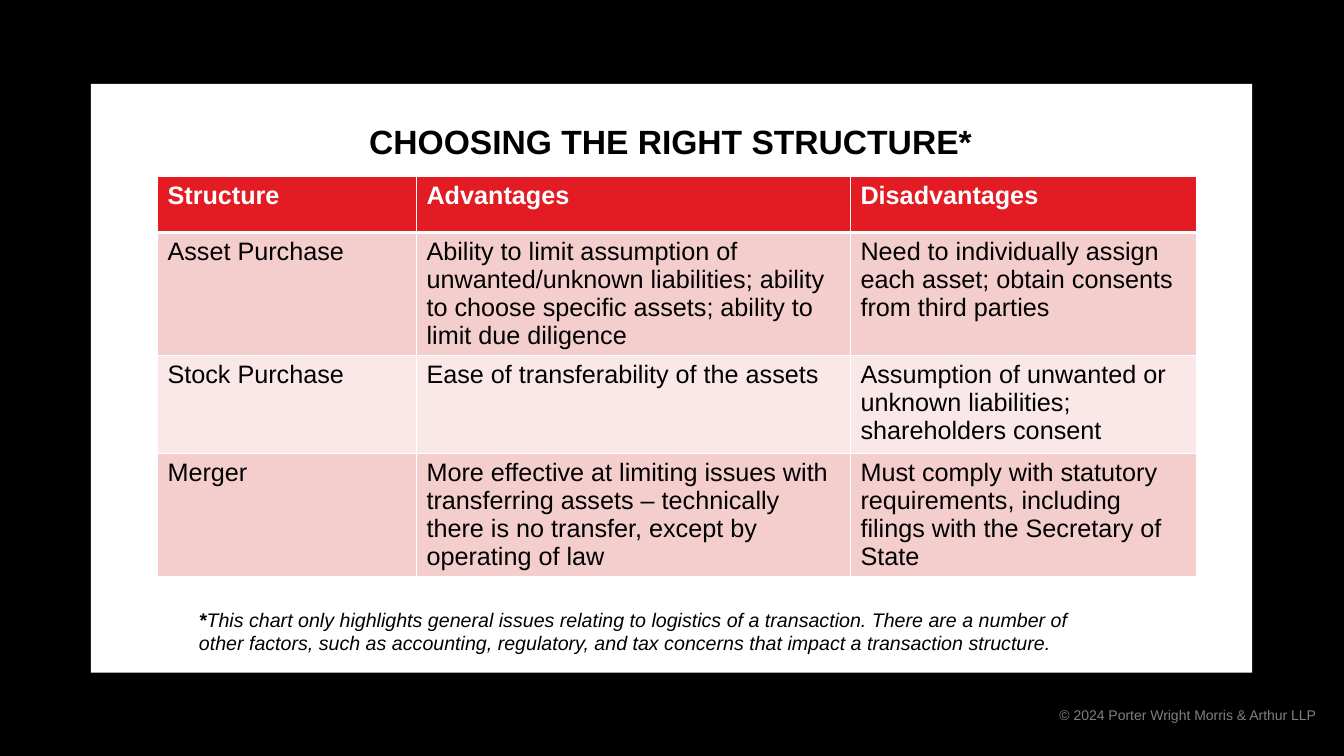
from lxml.etree import SubElement
from pptx import Presentation
from pptx.dml.color import RGBColor
from pptx.enum.shapes import MSO_SHAPE
from pptx.enum.text import MSO_ANCHOR, MSO_AUTO_SIZE, PP_ALIGN
from pptx.oxml.ns import qn
from pptx.util import Pt

# Content
TITLE = "CHOOSING THE RIGHT STRUCTURE*"
ROWS = [
    ("Structure", "Advantages", "Disadvantages"),
    ("Asset Purchase",
     "Ability to limit assumption of unwanted/unknown liabilities; ability to "
     "choose specific assets; ability to limit due diligence",
     "Need to individually assign each asset; obtain consents from third parties"),
    ("Stock Purchase",
     "Ease of transferability of the assets",
     "Assumption of unwanted or unknown liabilities; shareholders consent"),
    ("Merger",
     "More effective at limiting issues with transferring assets – technically "
     "there is no transfer, except by operating of law",
     "Must comply with statutory requirements, including filings with the "
     "Secretary of State"),
]
FOOTNOTE = ("This chart only highlights general issues relating to logistics of a "
            "transaction. There are a number of other factors, such as accounting, "
            "regulatory, and tax concerns that impact a transaction structure.")
COPYRIGHT = "© 2024 Porter Wright Morris & Arthur LLP"

# Layout and colours
COL_WIDTHS = (185, 310, 247)
ROW_HEIGHTS = (40, 87.5, 70, 87.5)
BLACK, WHITE, GRAY = "000000", "FFFFFF", "808080"
RED, BANDS = "E31B23", ("FAE8E8", "F4CDCD")


def paint(fill, color):
    fill.solid()
    fill.fore_color.rgb = RGBColor.from_string(color)


def style(r, size, color=BLACK, bold=False, italic=False):
    r.font.name, r.font.size = "Arial", Pt(size)
    r.font.bold, r.font.italic = bold, italic
    r.font.color.rgb = RGBColor.from_string(color)


def set_borders(cell, widths):
    tcPr = cell._tc.get_or_add_tcPr()
    for side, width in widths.items():
        ln = SubElement(tcPr, qn(f"a:ln{side}"), w=str(Pt(width)))
        fill = SubElement(ln, qn("a:solidFill"))
        SubElement(fill, qn("a:srgbClr"), val=WHITE)


def add_text(s, box, runs, size, color=BLACK):
    tf = s.shapes.add_textbox(*map(Pt, box)).text_frame
    tf.word_wrap = True
    p = tf.paragraphs[0]
    for text, bold, italic in runs:
        r = p.add_run()
        r.text = text
        style(r, size, color, bold, italic)
    return tf


prs = Presentation()
prs.slide_width, prs.slide_height = Pt(960), Pt(540)
s = prs.slides.add_slide(prs.slide_layouts[5])
paint(s.background.fill, BLACK)

# Title
title = s.shapes.title
title.left, title.top, title.width, title.height = map(Pt, (75, 71, 808, 48))
tf = title.text_frame
tf.text = TITLE
tf.auto_size = MSO_AUTO_SIZE.NONE
tf.vertical_anchor = MSO_ANCHOR.BOTTOM
p = tf.paragraphs[0]
p.alignment, p.line_spacing = PP_ALIGN.CENTER, 0.9
style(p.runs[0], 24, bold=True)

# White card behind the title
card = s.shapes.add_shape(MSO_SHAPE.RECTANGLE, *map(Pt, (65, 60, 829.5, 420.5)))
card.shadow.inherit = False
paint(card.fill, WHITE)
card.line.fill.background()
title.element.addprevious(card.element)

# Comparison table
table = s.shapes.add_table(len(ROWS), len(COL_WIDTHS), Pt(112.5), Pt(126),
                           Pt(sum(COL_WIDTHS)), Pt(sum(ROW_HEIGHTS))).table
for column, width in zip(table.columns, COL_WIDTHS):
    column.width = Pt(width)
for i, texts in enumerate(ROWS):
    table.rows[i].height = Pt(ROW_HEIGHTS[i])
    header = i == 0
    for j, text in enumerate(texts):
        cell = table.cell(i, j)
        cell.text = text
        style(cell.text_frame.paragraphs[0].runs[0], 18,
              WHITE if header else BLACK, bold=header)
        set_borders(cell, {"L": 1, "R": 1, "T": 3 if i == 1 else 1,
                           "B": 3 if header else 1})
        paint(cell.fill, RED if header else BANDS[i % 2])

# Footnote and copyright line
add_text(s, (135, 430.5, 669, 42.5),
         [("*", True, True), (FOOTNOTE, False, True)], 14)
tf = add_text(s, (623, 481, 324, 59), [(COPYRIGHT, False, False)], 10, GRAY)
tf.vertical_anchor = MSO_ANCHOR.MIDDLE
tf.paragraphs[0].alignment = PP_ALIGN.RIGHT

prs.save("out.pptx")
